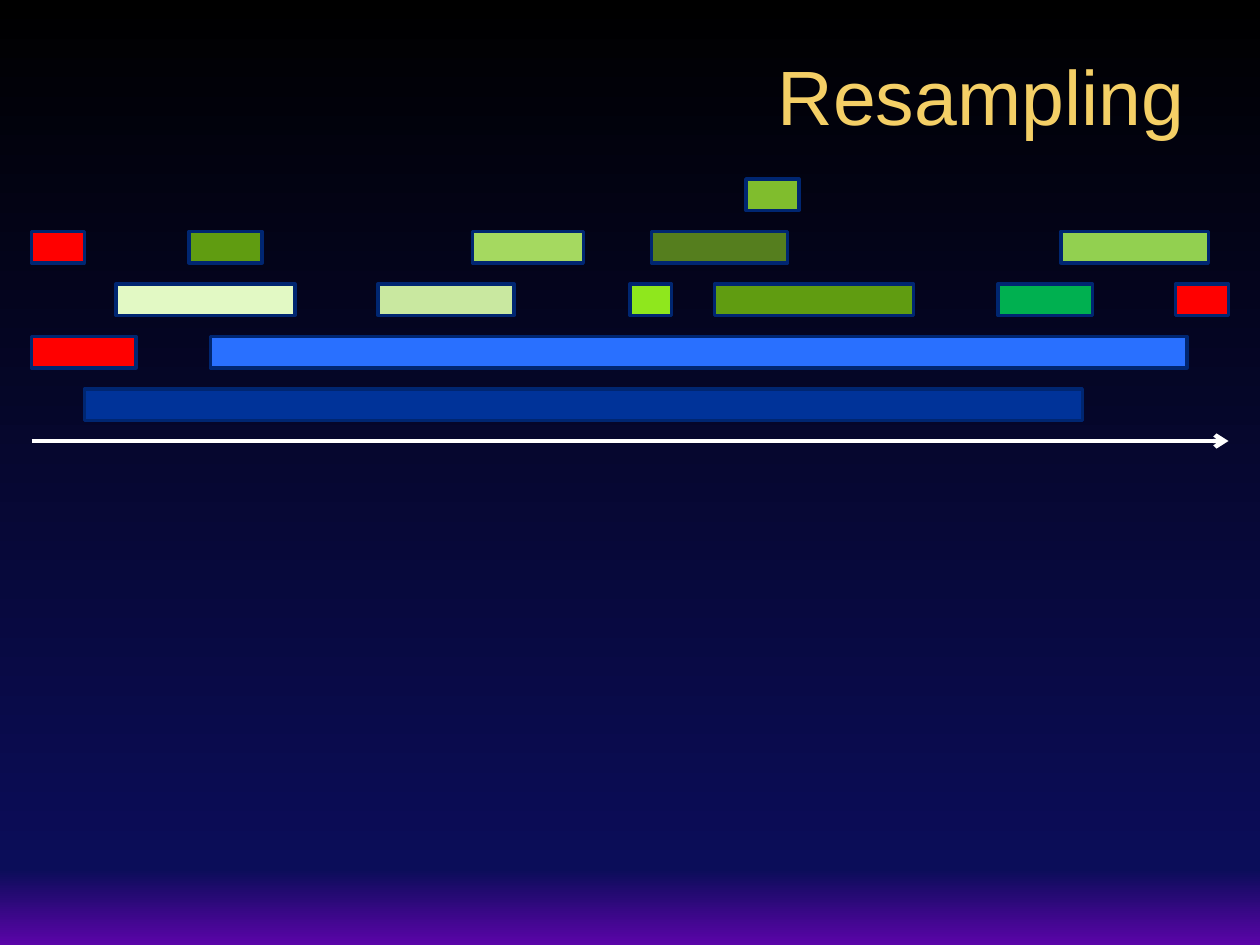
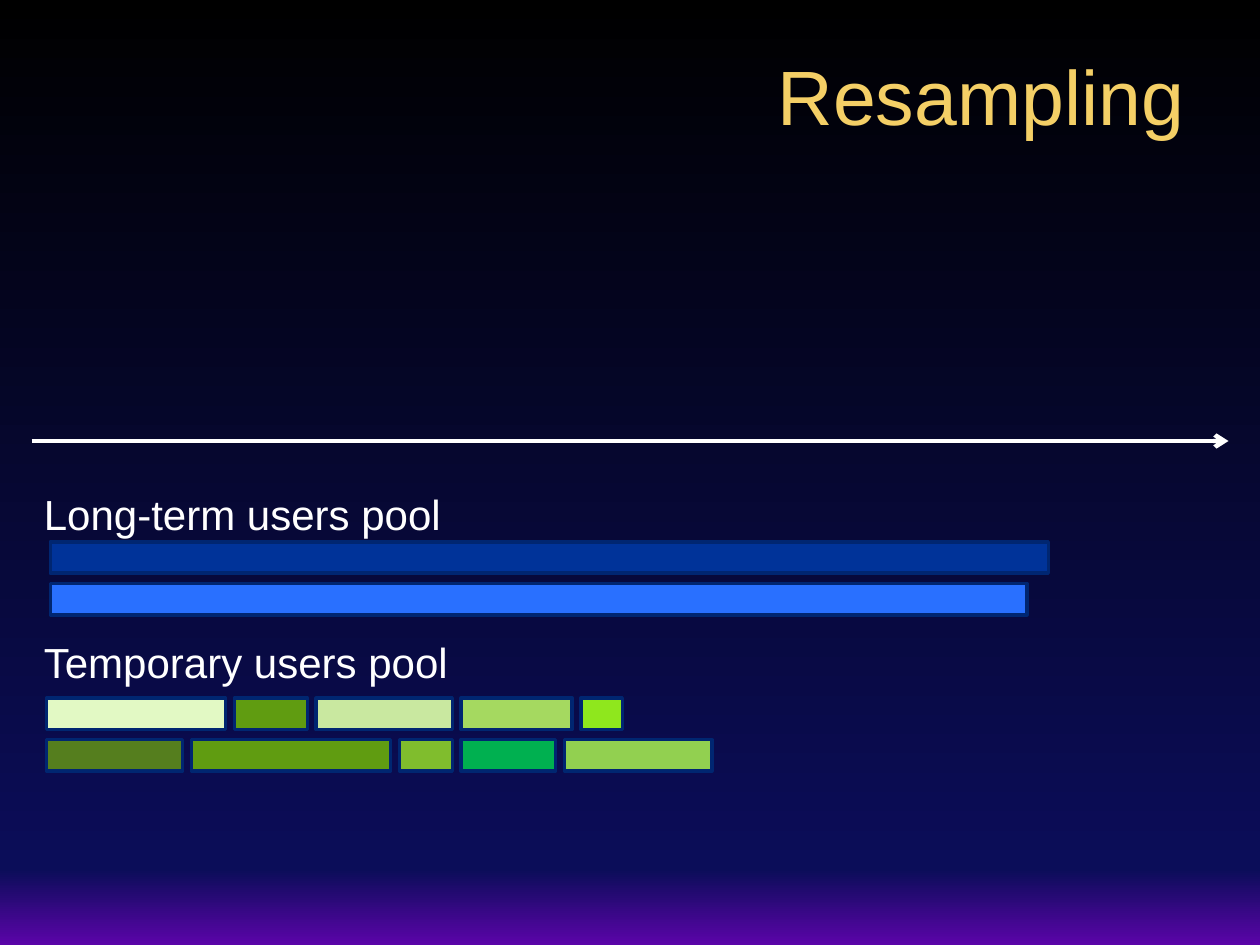
from collections import namedtuple

from lxml import etree
from pptx import Presentation
from pptx.dml.color import RGBColor
from pptx.enum.shapes import MSO_CONNECTOR, MSO_SHAPE
from pptx.enum.text import MSO_ANCHOR, MSO_AUTO_SIZE, PP_ALIGN
from pptx.oxml.ns import qn
from pptx.util import Inches, Pt

FONT = "Arial"
GOLD = RGBColor(0xF4, 0xCF, 0x66)
WHITE = RGBColor(0xFF, 0xFF, 0xFF)
OUTLINE = RGBColor(0x00, 0x26, 0x71)
NAVY = RGBColor(0x00, 0x33, 0x99)
BLUE = RGBColor(0x29, 0x70, 0xFF)
RED = RGBColor(0xFF, 0x00, 0x00)
CREAM = RGBColor(0xE2, 0xF9, 0xC4)
PALE = RGBColor(0xC9, 0xE8, 0xA0)
LEAF = RGBColor(0x60, 0x9C, 0x11)
LIME = RGBColor(0x8F, 0xE7, 0x1D)
OLIVE = RGBColor(0x55, 0x7E, 0x1E)
EMERALD = RGBColor(0x00, 0xB0, 0x50)
SPRING = RGBColor(0x92, 0xD0, 0x50)
SOFT = RGBColor(0xA5, 0xD9, 0x60)
GRASS = RGBColor(0x80, 0xBD, 0x2D)

BACKGROUND_STOPS = [(0, "000000"), (92, "0B0D59"), (100, "5A04A8")]
BAR_HEIGHT = 0.25
ROW_STEP = 5 / 12

# Each user job: left edge and row on the timeline, width and colour
Job = namedtuple("Job", "left row width color")
LONG_TERM = [Job(0.42, 4, 7.92, NAVY), Job(1.42, 3, 7.75, BLUE)]
TEMPORARY_FIRST = [
    Job(0.67, 2, 1.42, CREAM), Job(1.25, 1, 0.58, LEAF), Job(2.75, 2, 1.08, PALE),
    Job(3.5, 1, 0.88, SOFT), Job(4.75, 2, 0.33, LIME),
]
TEMPORARY_SECOND = [
    Job(4.92, 1, 1.08, OLIVE), Job(5.42, 2, 1.58, LEAF), Job(5.67, 0, 0.42, GRASS),
    Job(7.67, 2, 0.75, EMERALD), Job(8.17, 1, 1.17, SPRING),
]
DISCARDED = [Job(0, 3, 0.83, RED), Job(0, 1, 0.42, RED), Job(9.08, 2, 0.42, RED)]
# The first long-term job starts at the same offset as its neighbours' grid
TIMELINE_JOBS = LONG_TERM + TEMPORARY_FIRST + TEMPORARY_SECOND + DISCARDED


def set_values(target, values):
    for name, value in values.items():
        setattr(target, name, value)


def set_background(master):
    fill = master.background.fill
    fill.gradient()
    fill.gradient_angle = 270
    stop_list = next(master.element.iter(qn("a:gsLst")))
    for stop in list(stop_list):
        stop_list.remove(stop)
    for percent, color in BACKGROUND_STOPS:
        stop = etree.SubElement(stop_list, qn("a:gs"), pos=str(percent * 1000))
        etree.SubElement(stop, qn("a:srgbClr"), val=color)


def add_text(frame, text, size, color, align=PP_ALIGN.LEFT):
    paragraph = frame.paragraphs[0]
    paragraph.alignment = align
    run = paragraph.add_run()
    run.text = text
    set_values(run.font, {"name": FONT, "size": Pt(size)})
    run.font.color.rgb = color


def add_time_axis(slide, left, top, width):
    axis = slide.shapes.add_connector(
        MSO_CONNECTOR.STRAIGHT, Inches(left), Inches(top), Inches(left + width), Inches(top))
    axis.line.width = Pt(2.5)
    axis.line.color.rgb = WHITE
    etree.SubElement(axis.line._get_or_add_ln(), qn("a:tailEnd"), type="arrow")
    etree.SubElement(axis._element.spPr, qn("a:effectLst"))


def add_base_slide(presentation):
    """Title and time axis, common to both slides."""
    slide = presentation.slides.add_slide(presentation.slide_layouts[5])
    title = slide.shapes.title
    set_values(title, {"left": Inches(0.5), "top": Inches(0.25),
                       "width": Inches(9), "height": Inches(1)})
    title.text_frame.vertical_anchor = MSO_ANCHOR.MIDDLE
    add_text(title.text_frame, "Resampling", 44, GOLD, PP_ALIGN.RIGHT)
    add_time_axis(slide, 0.25, 3.5, 9.5)
    return slide


def add_bar(shapes, left, top, job):
    bar = shapes.add_shape(MSO_SHAPE.RECTANGLE, Inches(left), Inches(top),
                           Inches(job.width), Inches(BAR_HEIGHT))
    bar.shadow.inherit = False
    bar.fill.solid()
    bar.fill.fore_color.rgb = job.color
    bar.line.color.rgb = OUTLINE
    bar.line.width = Pt(2)


def add_timeline(slide, left, top):
    for job in TIMELINE_JOBS:
        add_bar(slide.shapes, left + job.left, top + job.row * ROW_STEP, job)


def add_pool(slide, left, top, width, label, rows, indent, drop, gap):
    """A label above rows of bars packed side by side."""
    shapes = slide.shapes.add_group_shape().shapes
    for index, jobs in enumerate(rows):
        bar_left = left + indent
        for job in jobs:
            add_bar(shapes, bar_left, top + drop + index * 0.33, job)
            bar_left += job.width + gap
    box = shapes.add_textbox(Inches(left), Inches(top), Inches(width), Inches(0.5))
    set_values(box.text_frame, {"word_wrap": False,
                                "auto_size": MSO_AUTO_SIZE.SHAPE_TO_FIT_TEXT})
    add_text(box.text_frame, label, 24, WHITE)


def main():
    presentation = Presentation()
    set_values(presentation, {"slide_width": Inches(10), "slide_height": Inches(7.5)})
    set_background(presentation.slide_master)

    # Jobs as they occur over time
    add_timeline(add_base_slide(presentation), 0.25, 1.42)

    # Jobs sorted into pools, cut-off jobs dropped
    slide = add_base_slide(presentation)
    add_pool(slide, 0.25, 3.83, 3.39, "Long-term users pool",
             [[job] for job in LONG_TERM], indent=0.15, drop=0.47, gap=0)
    add_pool(slide, 0.25, 5, 3.53, "Temporary users pool",
             [TEMPORARY_FIRST, TEMPORARY_SECOND], indent=0.12, drop=0.54, gap=0.07)
    presentation.save("out.pptx")


if __name__ == "__main__":
    main()
